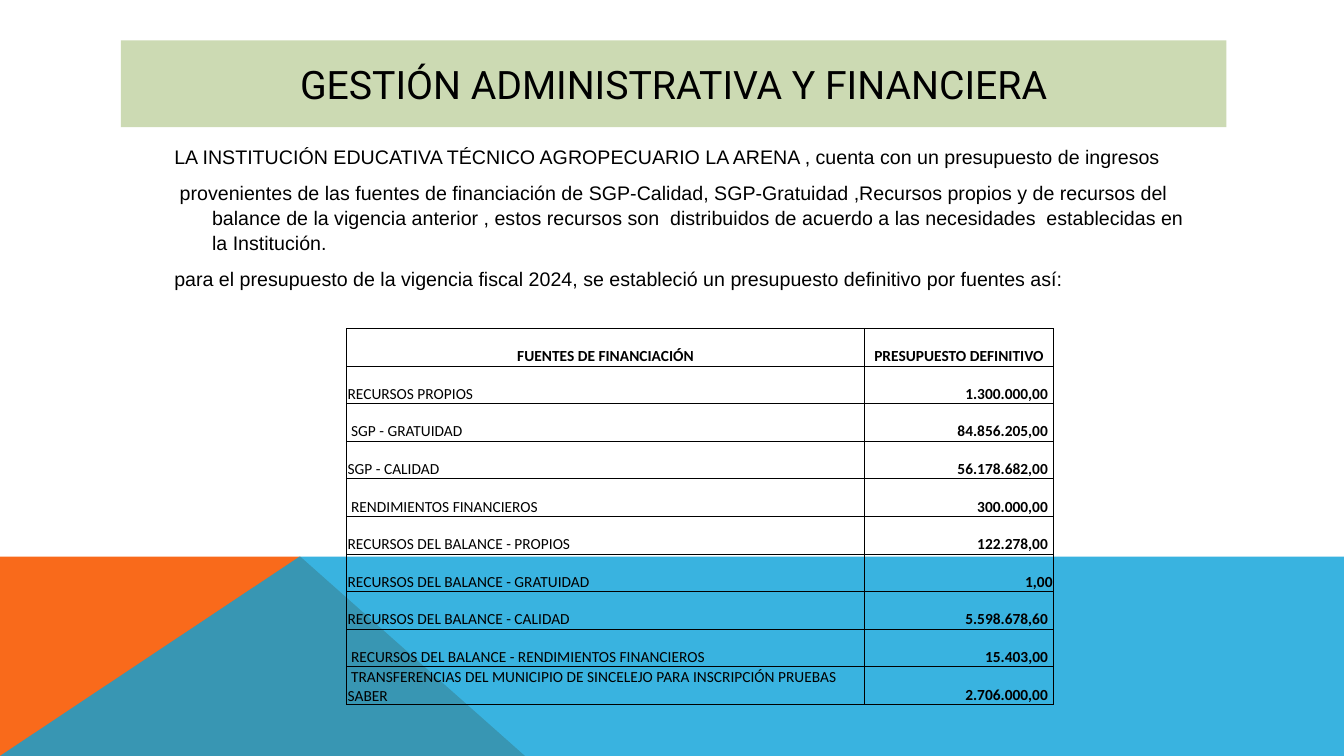
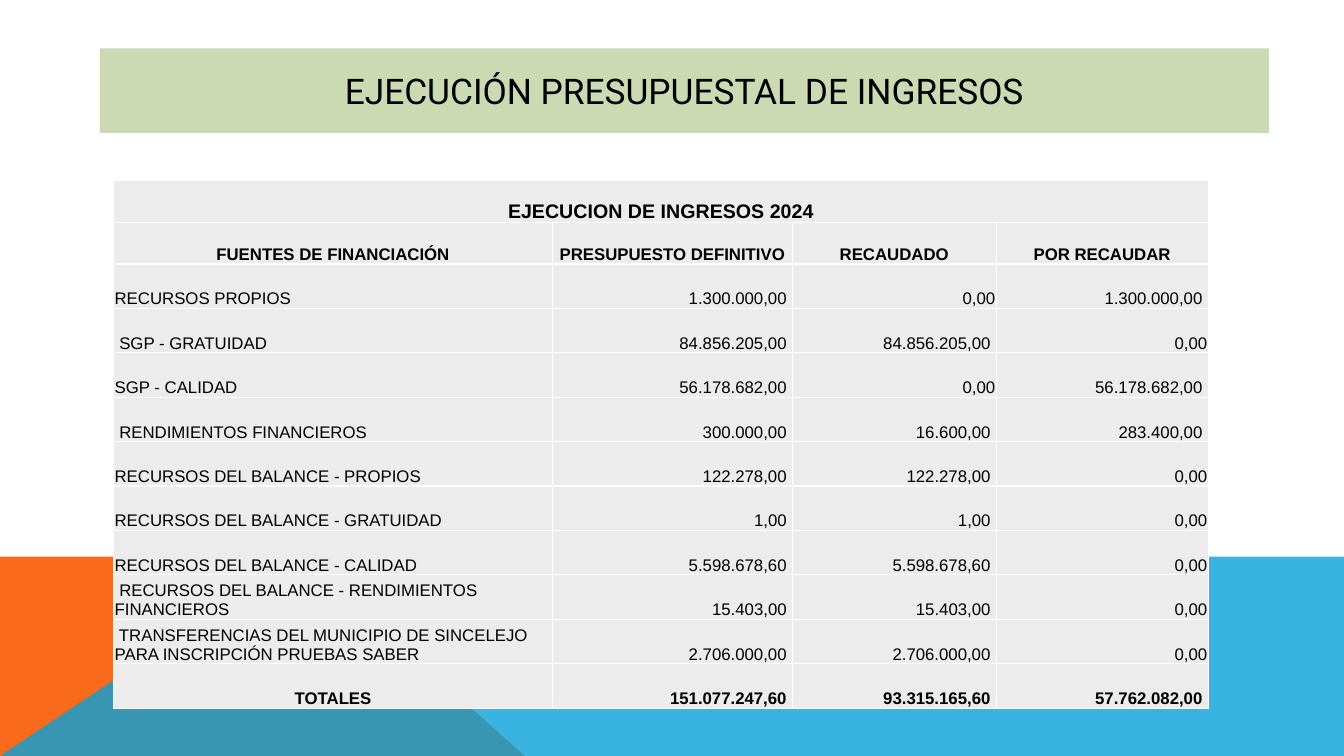
from dataclasses import dataclass

from lxml import etree
from pptx import Presentation
from pptx.dml.color import RGBColor
from pptx.enum import text as t
from pptx.oxml import ns
from pptx.util import Pt

# Shared look
WIDTH, HEIGHT = 960, 540
BAND_TOP = 397.6
BLACK, WHITE = "000000", "FFFFFF"
ORANGE, BLUE, GREEN, GREY = "F96A1B", "08A1D9", "CCDAB3", "ECECEC"
NO_STYLE = "{2D5ABB26-0587-4C30-8999-92F81FD0307C}"
LEFT, CENTER, RIGHT = t.PP_ALIGN.LEFT, t.PP_ALIGN.CENTER, t.PP_ALIGN.RIGHT

# Content
INTRODUCTION = [
    "LA INSTITUCIÓN EDUCATIVA TÉCNICO AGROPECUARIO LA ARENA , cuenta con un "
    "presupuesto de ingresos",
    " provenientes de las fuentes de financiación de SGP-Calidad, SGP-Gratuidad "
    ",Recursos propios y de recursos del balance de la vigencia anterior , estos "
    "recursos son  distribuidos de acuerdo a las necesidades  establecidas en la "
    "Institución.",
    "para el presupuesto de la vigencia fiscal 2024, se estableció un presupuesto "
    "definitivo por fuentes así:",
]
HEADER = ["FUENTES DE FINANCIACIÓN", "PRESUPUESTO DEFINITIVO", "RECAUDADO",
          "POR RECAUDAR"]
INCOME = [
    ["RECURSOS PROPIOS", "1.300.000,00", "0,00", "1.300.000,00"],
    [" SGP - GRATUIDAD", "84.856.205,00", "84.856.205,00", "0,00"],
    ["SGP - CALIDAD", "56.178.682,00", "0,00", "56.178.682,00"],
    [" RENDIMIENTOS FINANCIEROS", "300.000,00", "16.600,00", "283.400,00"],
    ["RECURSOS DEL BALANCE - PROPIOS", "122.278,00", "122.278,00", "0,00"],
    ["RECURSOS DEL BALANCE - GRATUIDAD", "1,00", "1,00", "0,00"],
    ["RECURSOS DEL BALANCE - CALIDAD", "5.598.678,60", "5.598.678,60", "0,00"],
    [" RECURSOS DEL BALANCE - RENDIMIENTOS FINANCIEROS", "15.403,00",
     "15.403,00", "0,00"],
    [" TRANSFERENCIAS DEL MUNICIPIO DE SINCELEJO PARA INSCRIPCIÓN PRUEBAS SABER",
     "2.706.000,00", "2.706.000,00", "0,00"],
]
TOTALS = ["TOTALES", "151.077.247,60", "93.315.165,60", "57.762.082,00"]


@dataclass
class TableStyle:
    font: str
    size: float
    line_color: str
    line_width: float
    flush_amount: str  # amount set right against the cell edge
    fill: str = ""
    bold_amounts: bool = False


BUDGET_STYLE = TableStyle("Calibri", 11, BLACK, 0.5, "1,00", bold_amounts=True)
EXECUTION_STYLE = TableStyle("Arial", 12, WHITE, 1, "0,00", fill=GREY)


def rgb(color):
    return RGBColor.from_string(color)


def fill_solid(target, color):
    target.fill.solid()
    target.fill.fore_color.rgb = rgb(color)


def format_paragraph(paragraph, font, size, align, bold=False):
    paragraph.alignment = align
    for run in paragraph.runs:
        run.font.name = font
        run.font.size = Pt(size)
        run.font.bold = bold
        run.font.color.rgb = rgb(BLACK)


# Bottom band, kept on the layout
def add_band_part(slide, layout, position, points, color, opacity=100):
    corners = [(Pt(x), Pt(y)) for x, y in points]
    builder = slide.shapes.build_freeform(*corners[0])
    builder.add_line_segments(corners[1:], close=True)
    shape = builder.convert_to_shape()
    shape.shadow.inherit = False
    fill_solid(shape, color)
    shape.line.fill.background()
    if opacity < 100:
        clr = next(shape.element.iter(ns.qn("a:srgbClr")))
        etree.SubElement(clr, ns.qn("a:alpha"), val=str(opacity * 1000))
    layout.shapes.element.insert(position, shape.element)


def add_band(slide, layout):
    add_band_part(slide, layout, 2, [(0, HEIGHT), (0, BAND_TOP), (214.5, BAND_TOP),
                                     (375, HEIGHT)], ORANGE)
    add_band_part(slide, layout, 3, [(0, HEIGHT), (214, BAND_TOP), (WIDTH, BAND_TOP),
                                     (WIDTH, HEIGHT)], BLUE, opacity=80)


def set_title(slide, title, left, top, width, height, size):
    shape = slide.shapes.title
    shape.left, shape.top = Pt(left), Pt(top)
    shape.width, shape.height = Pt(width), Pt(height)
    fill_solid(shape, GREEN)
    frame = shape.text_frame
    frame.text = title
    frame.auto_size = t.MSO_AUTO_SIZE.NONE
    frame.vertical_anchor = t.MSO_ANCHOR.MIDDLE
    format_paragraph(frame.paragraphs[0], "Roboto", size, CENTER)


def add_introduction(slide, left, top, width, height):
    frame = slide.shapes.add_textbox(Pt(left), Pt(top), Pt(width), Pt(height)).text_frame
    frame.word_wrap = True
    frame.text = "\n".join(INTRODUCTION)
    for index, paragraph in enumerate(frame.paragraphs):
        format_paragraph(paragraph, "Arial", 14, LEFT)
        paragraph.line_spacing = 1.05
        paragraph.space_before = Pt(8 if index else 0)
        properties = paragraph._p.get_or_add_pPr()
        properties.set("marL", str(Pt(27)))
        properties.set("indent", str(Pt(-27)))


# Tables
def set_borders(cell, color, width):
    properties = cell._tc.get_or_add_tcPr()
    for index, side in enumerate(("lnL", "lnR", "lnT", "lnB")):
        line = etree.Element(ns.qn("a:" + side), w=str(Pt(width)))
        fill = etree.SubElement(line, ns.qn("a:solidFill"))
        etree.SubElement(fill, ns.qn("a:srgbClr"), val=color)
        properties.insert(index, line)


def format_cell(cell, value, style, align, bold):
    cell.text = value
    cell.vertical_anchor = t.MSO_ANCHOR.BOTTOM
    cell.margin_left = cell.margin_top = Pt(0.7)
    loose = align == RIGHT and value != style.flush_amount
    cell.margin_right = Pt(4 if loose else 0.7)
    cell.margin_bottom = Pt(0)
    if style.fill:
        fill_solid(cell, style.fill)
    else:
        cell.fill.background()
    set_borders(cell, style.line_color, style.line_width)
    format_paragraph(cell.text_frame.paragraphs[0], style.font, style.size, align, bold)


def add_income_table(slide, left, top, widths, heights, rows, style):
    graphic = slide.shapes.add_table(len(rows), len(widths), Pt(left), Pt(top),
                                     Pt(sum(widths)), Pt(sum(heights)))
    next(graphic.element.iter(ns.qn("a:tableStyleId"))).text = NO_STYLE
    table = graphic.table
    table.first_row = table.horz_banding = False
    for column, width in zip(table.columns, widths):
        column.width = Pt(width)
    for row, height in zip(table.rows, heights):
        row.height = Pt(height)
    for row_index, values in enumerate(rows):
        income, totals = values in INCOME_ROWS, values == TOTALS
        for column_index, value in enumerate(values):
            amount = column_index > 0 and (income or totals)
            align = RIGHT if amount else LEFT if income else CENTER
            bold = not income or (amount and style.bold_amounts)
            format_cell(table.cell(row_index, column_index), value, style, align, bold)
    return table


BUDGET_ROWS = [row[:2] for row in INCOME]
INCOME_ROWS = INCOME + BUDGET_ROWS


def main():
    presentation = Presentation()
    presentation.slide_width, presentation.slide_height = Pt(WIDTH), Pt(HEIGHT)
    layout = presentation.slide_layouts[5]

    # Budget by source
    slide = presentation.slides.add_slide(layout)
    add_band(slide, layout)
    set_title(slide, "GESTIÓN ADMINISTRATIVA Y FINANCIERA", 86.4, 28.8, 789.6, 62, 28)
    add_introduction(slide, 117.4, 99.4, 750, 110)
    add_income_table(slide, 247.6, 234.6, [370, 135], [26.85] * 10,
                     [HEADER[:2]] + BUDGET_ROWS, BUDGET_STYLE)

    # Budget execution
    slide = presentation.slides.add_slide(layout)
    set_title(slide, "EJECUCIÓN PRESUPUESTAL DE INGRESOS", 71.4, 34.6, 835, 60.4, 25.2)
    caption = ["EJECUCION DE INGRESOS 2024", "", "", ""]
    table = add_income_table(slide, 81.2, 129.2, [313.4, 171.4, 145.6, 151.4],
                             [30, 29.4] + [31.72] * 10,
                             [caption, HEADER] + INCOME + [TOTALS], EXECUTION_STYLE)
    table.cell(0, 0).merge(table.cell(0, 3))
    format_paragraph(table.cell(0, 0).text_frame.paragraphs[0], "Arial", 14, CENTER, True)

    presentation.save("out.pptx")


if __name__ == "__main__":
    main()
